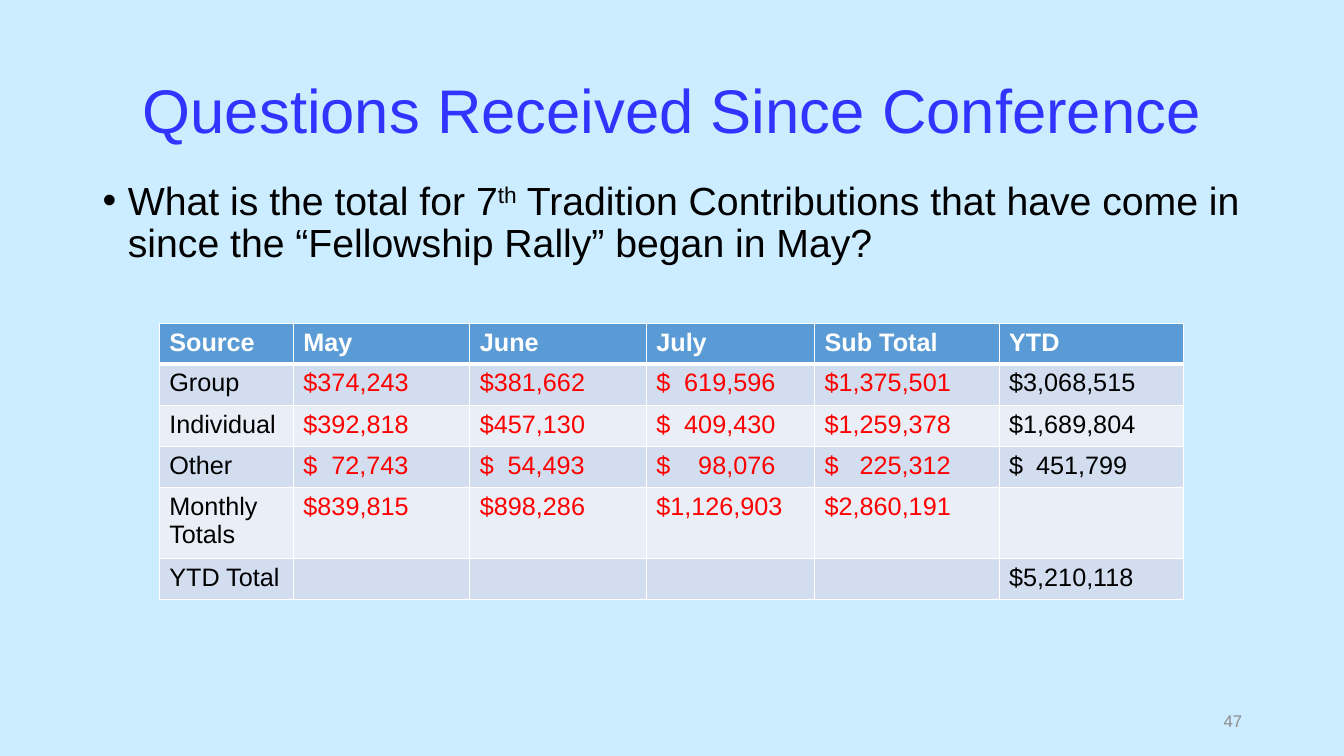
from dataclasses import dataclass

from lxml import etree
from pptx import Presentation
from pptx.dml.color import RGBColor
from pptx.enum.text import MSO_ANCHOR, PP_ALIGN
from pptx.oxml.ns import qn
from pptx.util import Inches, Pt

LEFT, CENTER, RIGHT = PP_ALIGN.LEFT, PP_ALIGN.CENTER, PP_ALIGN.RIGHT
TOP, MIDDLE = MSO_ANCHOR.TOP, MSO_ANCHOR.MIDDLE


@dataclass(frozen=True)
class Theme:
    font: str = "Arial"
    background: str = "CCECFF"
    title: str = "3333FF"
    text: str = "000000"
    amount: str = "FF0000"
    muted: str = "8C8C8C"
    white: str = "FFFFFF"
    header: str = "5B9BD5"
    bands: tuple = ("D2DEEF", "EAEFF7")
    title_size: int = 44
    body_size: int = 28
    table_size: int = 18
    number_size: int = 12


COLUMN_WIDTHS = [1.33, 1.75, 1.75, 1.67, 1.83, 1.83]
AMOUNT_TABS = [None, 1.04, 1.04, 1.18, 1.25, 1.17]
HEADER_HEIGHT, ROW_HEIGHT = 0.37, 0.41
CONTRIBUTIONS = [
    ["Source", "May", "June", "July", "Sub Total", "YTD"],
    ["Group", "$374,243", "$381,662", "$\t619,596", "$1,375,501", "$3,068,515"],
    ["Individual", "$392,818", "$457,130", "$\t409,430", "$1,259,378", "$1,689,804"],
    ["Other", "$\t72,743", "$\t54,493", "$\t98,076", "$\t225,312", "$\t451,799"],
    ["Monthly\nTotals", "$839,815", "$898,286", "$1,126,903", "$2,860,191", ""],
    ["YTD Total", "", "", "", "", "$5,210,118"],
]


class SlideBuilder:
    def __init__(self, page, theme):
        self.page = page
        self.theme = theme
        self.paint(page.background.fill, theme.background)

    def paint(self, fill, color):
        fill.solid()
        fill.fore_color.rgb = RGBColor.from_string(color)

    def style(self, span, size, color, bold=False):
        span.font.name = self.theme.font
        span.font.size = Pt(size)
        span.font.bold = bold
        span.font.color.rgb = RGBColor.from_string(color)

    def text(self, place, parts, size, color, align=LEFT, anchor=TOP, spacing=1.0):
        box = self.page.shapes.add_textbox(*map(Inches, place))
        frame = box.text_frame
        frame.word_wrap = True
        frame.vertical_anchor = anchor
        para = frame.paragraphs[0]
        para.alignment = align
        para.line_spacing = spacing
        for part in parts:
            span = para.add_run()
            span.text = part
            self.style(span, size, color)
        return box

    def bullet(self, para, indent, space_before):
        para.space_before = Pt(space_before)
        properties = para._p.get_or_add_pPr()
        properties.set("marL", str(Inches(indent)))
        properties.set("indent", str(-Inches(indent)))
        etree.SubElement(properties, qn("a:buFont"), typeface=self.theme.font)
        etree.SubElement(properties, qn("a:buChar"), char="•")

    def superscript(self, span):
        span._r.get_or_add_rPr().set("baseline", "30000")

    def right_tab(self, para, position):
        tabs = etree.SubElement(para._p.get_or_add_pPr(), qn("a:tabLst"))
        etree.SubElement(tabs, qn("a:tab"), pos=str(Inches(position)), algn="r")

    def borders(self, cell, top, bottom):
        properties = cell._tc.get_or_add_tcPr()
        sides = {"a:lnL": 1, "a:lnR": 1, "a:lnT": top, "a:lnB": bottom}
        for index, (side, width) in enumerate(sides.items()):
            line = etree.Element(qn(side), w=str(Pt(width)))
            fill = etree.SubElement(line, qn("a:solidFill"))
            etree.SubElement(fill, qn("a:srgbClr"), val=self.theme.white)
            properties.insert(index, line)

    def cell_colors(self, row, column, last_column):
        theme = self.theme
        if row == 0:
            return theme.header, theme.white
        color = theme.amount if 0 < column < last_column else theme.text
        return theme.bands[(row - 1) % 2], color

    def table(self, left, top, rows, widths, tabs):
        heights = [HEADER_HEIGHT] + [ROW_HEIGHT] * (len(rows) - 1)
        place = (left, top, sum(widths), sum(heights))
        frame = self.page.shapes.add_table(len(rows), len(widths), *map(Inches, place))
        table = frame.table
        for column, width in zip(table.columns, widths):
            column.width = Inches(width)
        for row, height in zip(table.rows, heights):
            row.height = Inches(height)
        for row, values in enumerate(rows):
            for column, value in enumerate(values):
                cell = table.cell(row, column)
                fill, color = self.cell_colors(row, column, len(widths) - 1)
                cell.text_frame.text = value
                self.paint(cell.fill, fill)
                self.borders(cell, 3 if row == 1 else 1, 3 if row == 0 else 1)
                for para in cell.text_frame.paragraphs:
                    para.font.size = Pt(self.theme.table_size)
                    if "\t" in value:
                        self.right_tab(para, tabs[column])
                    for span in para.runs:
                        self.style(span, self.theme.table_size, color, row == 0)


def main():
    deck = Presentation()
    deck.slide_width, deck.slide_height = Inches(13.33), Inches(7.5)
    theme = Theme()
    builder = SlideBuilder(deck.slides.add_slide(deck.slide_layouts[6]), theme)

    title = builder.text((0.92, 0.4, 11.5, 1.45), ["Questions Received Since Conference"],
                         theme.title_size, theme.title, CENTER, MIDDLE, 0.9)
    builder.paint(title.fill, theme.background)

    question = builder.text(
        (0.92, 1.75, 11.5, 5.01),
        ["What is the total for 7", "th",
         " Tradition Contributions that have come in since the “Fellowship Rally” began in May?"],
        theme.body_size, theme.text, spacing=0.9)
    para = question.text_frame.paragraphs[0]
    builder.bullet(para, 0.25, 10)
    builder.superscript(para.runs[1])

    builder.text((9.42, 6.95, 3, 0.4), ["47"], theme.number_size, theme.muted, RIGHT, MIDDLE)
    builder.table(1.58, 3.21, CONTRIBUTIONS, COLUMN_WIDTHS, AMOUNT_TABS)
    deck.save("out.pptx")


if __name__ == "__main__":
    main()
